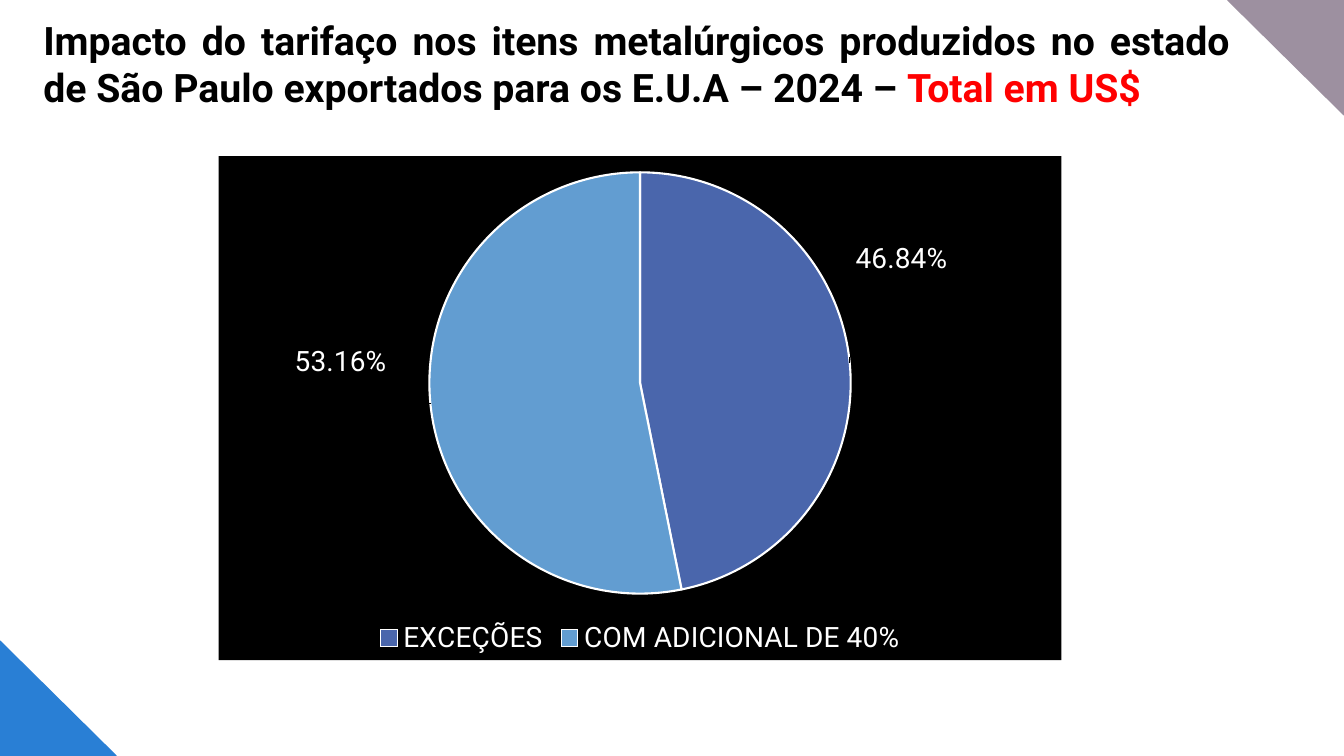
from lxml import etree
from pptx import Presentation
from pptx.chart.data import CategoryChartData
from pptx.dml.color import RGBColor
from pptx.enum.chart import XL_CHART_TYPE, XL_LABEL_POSITION, XL_LEGEND_POSITION
from pptx.enum.shapes import MSO_SHAPE
from pptx.enum.text import MSO_ANCHOR, PP_ALIGN
from pptx.oxml import parse_xml
from pptx.oxml.ns import qn
from pptx.util import Pt

PIE = XL_CHART_TYPE.PIE
BOTTOM = XL_LEGEND_POSITION.BOTTOM
OUTSIDE = XL_LABEL_POSITION.OUTSIDE_END
TRIANGLE = MSO_SHAPE.RIGHT_TRIANGLE
TOP = MSO_ANCHOR.TOP
JUSTIFY = PP_ALIGN.JUSTIFY

FONT = "Roboto"
WHITE, BLACK = "FFFFFF", "000000"
WIDTH, HEIGHT = 960, 540
CORNER_W, CORNER_H = 83, 82
TITLE_BOX = (23.76, 7.92, 861.84, 74.88)
CHART_BOX = (156.24, 111.6, 601.92, 360)
PLOT = {"x": 0.25, "y": 0.03, "w": 0.5, "h": 0.84}
PERCENT = "0.00%"

TITLE = [
    ("Impacto do tarifaço nos itens metalúrgicos produzidos no estado "
     "de São Paulo exportados para os E.U.A – 2024 – ", BLACK),
    ("Total em US$", "FF0000"),
]
CORNERS = [
    (0, HEIGHT - CORNER_H, 0, "297FD5"),
    (WIDTH - CORNER_W, 0, 180, "9D90A0"),
]
SLICES = [
    ("EXCEÇÕES", 0.4684, "4A66AC", {"x": 0, "y": -0.17}),
    ("COM ADICIONAL DE 40%", 0.5316, "629DD1", {"x": -0.045, "y": -0.117}),
]
CHART_NS = 'xmlns:c="http://schemas.openxmlformats.org/drawingml/2006/chart"'


def rgb(color):
    return RGBColor.from_string(color)


def paint(fill, color):
    fill.solid()
    fill.fore_color.rgb = rgb(color)


def set_font(font, color, size, **values):
    for key, value in {"name": FONT, "size": Pt(size), **values}.items():
        setattr(font, key, value)
    font.color.rgb = rgb(color)


def make_layout(values, inner=False):
    layout = parse_xml(f"<c:layout {CHART_NS}><c:manualLayout/></c:layout>")
    entries = dict(values)
    if inner:
        entries = {"layoutTarget": "inner", "xMode": "edge", "yMode": "edge", **values}
    for key, value in entries.items():
        etree.SubElement(layout[0], qn(f"c:{key}")).set("val", str(value))
    return layout


def add_corner(slide, left, top, rotation, color):
    sp = slide.shapes.add_shape(TRIANGLE, Pt(left), Pt(top), Pt(CORNER_W), Pt(CORNER_H))
    sp.rotation = rotation
    sp.shadow.inherit = False
    paint(sp.fill, color)
    sp.line.color.rgb = rgb(color)
    sp.line.width = Pt(1)


def add_title(slide):
    sp = slide.shapes.title
    for key, value in zip(("left", "top", "width", "height"), TITLE_BOX):
        setattr(sp, key, Pt(value))
    tf = sp.text_frame
    tf.word_wrap = True
    tf.vertical_anchor = TOP
    p = tf.paragraphs[0]
    p.alignment = JUSTIFY
    p.line_spacing = 1.0
    for text, color in TITLE:
        r = p.add_run()
        r.text = text
        set_font(r.font, color, 28, bold=True)


def add_pie(slide):
    data = CategoryChartData(number_format=PERCENT)
    data.categories = [name for name, *_ in SLICES]
    data.add_series("Series 1", [value for _, value, *_ in SLICES])
    chart = slide.shapes.add_chart(PIE, *map(Pt, CHART_BOX), data).chart
    chart.has_title = False
    set_font(chart.font, WHITE, 10)
    chart.has_legend = True
    chart.legend.position = BOTTOM
    chart.legend.include_in_layout = False
    set_font(chart.legend.font, WHITE, 20)

    plot = chart.plots[0]
    plot.vary_by_categories = True
    series = plot.series[0]
    labels = series.data_labels
    labels.show_value = True
    labels.number_format = PERCENT
    labels.number_format_is_linked = False
    labels.position = OUTSIDE
    set_font(labels.font, WHITE, 20)
    for i, (_, _, color, offset) in enumerate(SLICES):
        point = series.points[i]
        paint(point.format.fill, color)
        point.format.line.color.rgb = rgb(WHITE)
        point.format.line.width = Pt(1.5)
        label = point.data_label
        set_font(label.font, WHITE, 20)
        label.position = OUTSIDE
        dlbl = labels._element.findall(qn("c:dLbl"))[i]
        dlbl.insert(1, make_layout(offset))
        dlbl.insert(2, parse_xml(
            f'<c:numFmt {CHART_NS} formatCode="{PERCENT}" sourceLinked="0"/>'))

    space = chart._chartSpace
    area = space.chart.plotArea
    for old in area.findall(qn("c:layout")):
        area.remove(old)
    area.insert(0, make_layout(PLOT, inner=True))
    space.chart.addnext(parse_xml(
        f'<c:spPr {CHART_NS} xmlns:a="http://schemas.openxmlformats.org/drawingml/2006/main">'
        f'<a:solidFill><a:srgbClr val="{BLACK}"/></a:solidFill>'
        '<a:ln><a:noFill/></a:ln></c:spPr>'))


def main():
    prs = Presentation()
    prs.slide_width, prs.slide_height = Pt(WIDTH), Pt(HEIGHT)
    slide = prs.slides.add_slide(prs.slide_layouts[5])
    for corner in CORNERS:
        add_corner(slide, *corner)
    add_title(slide)
    add_pie(slide)
    prs.save("out.pptx")


if __name__ == "__main__":
    main()
